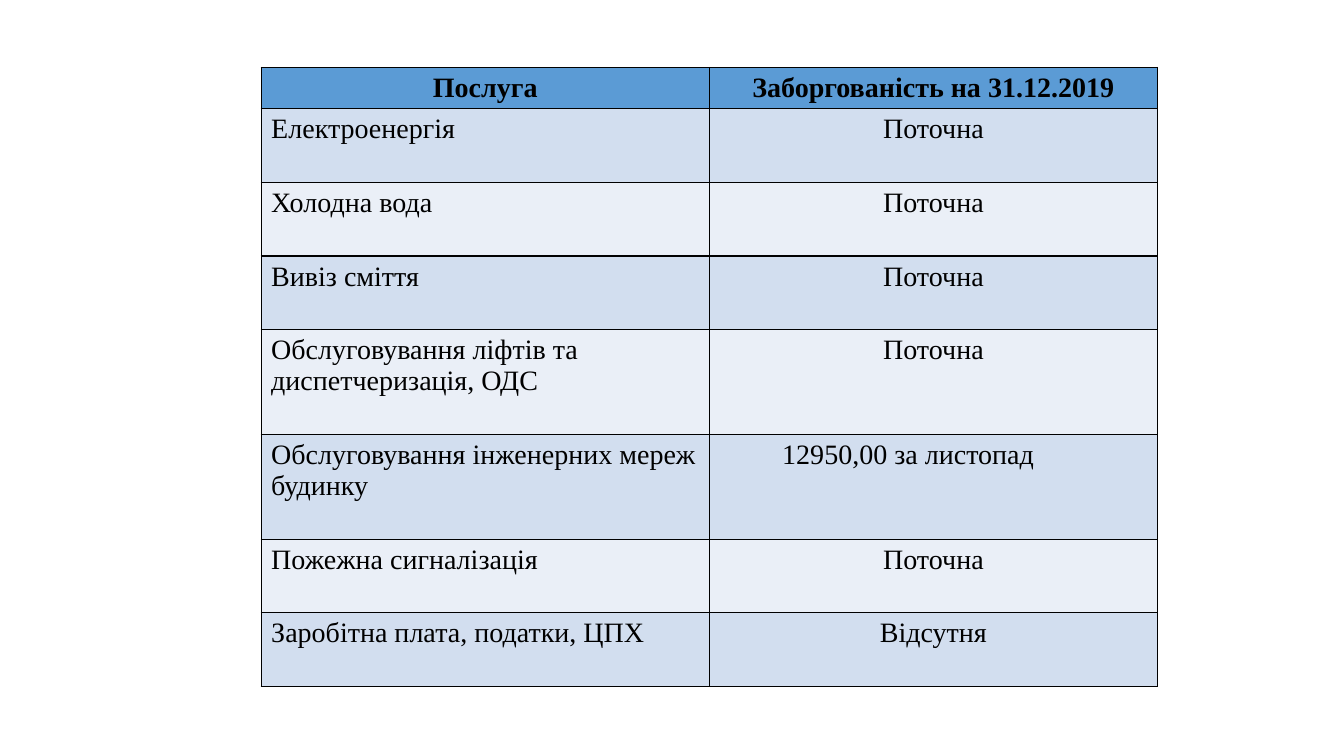
from dataclasses import dataclass

from lxml import etree
from pptx import Presentation
from pptx.dml.color import RGBColor
from pptx.enum import text
from pptx.oxml import ns
from pptx.util import Inches, Pt

HEADINGS = ("Послуга", "Заборгованість на 31.12.2019")
DEBTS = [
    ("Електроенергія", "Поточна"),
    ("Холодна вода", "Поточна"),
    ("Вивіз сміття", "Поточна"),
    ("Обслуговування ліфтів та диспетчеризація, ОДС", "Поточна"),
    ("Обслуговування інженерних мереж будинку", "12950,00 за листопад"),
    ("Пожежна сигналізація", "Поточна"),
    ("Заробітна плата, податки, ЦПХ", "Відсутня"),
]
TWO_LINE_SERVICES = {DEBTS[3][0], DEBTS[4][0]}
SHIFTED_DEBT = DEBTS[4][1]


@dataclass(frozen=True)
class Theme:
    font: str = "Times New Roman"
    size: int = 20
    ink: str = "000000"
    header: str = "5B9BD5"
    bands: tuple = ("D2DEEF", "EAEFF7")
    border: int = 1


THEME = Theme()
LEFT, TOP, COLUMN_WIDTH = 2.59, 0.67, 4.445
HEADER_HEIGHT, ROW_HEIGHT, TALL_HEIGHT = 0.41, 0.73, 1.04


def add_borders(cell):
    properties = cell._tc.get_or_add_tcPr()
    for side in ("lnL", "lnR", "lnT", "lnB"):
        line = etree.SubElement(properties, ns.qn(f"a:{side}"), w=str(Pt(THEME.border)))
        fill = etree.SubElement(line, ns.qn("a:solidFill"))
        etree.SubElement(fill, ns.qn("a:srgbClr"), val=THEME.ink)


def fill_cell(cell, words, color, centered, bold):
    add_borders(cell)
    cell.fill.solid()
    cell.fill.fore_color.rgb = RGBColor.from_string(color)
    cell.text_frame.text = words
    para = cell.text_frame.paragraphs[0]
    para.alignment = text.PP_ALIGN.CENTER if centered else text.PP_ALIGN.LEFT
    font = para.runs[0].font
    font.name, font.size, font.bold = THEME.font, Pt(THEME.size), bold
    font.color.rgb = RGBColor.from_string(THEME.ink)
    if words == SHIFTED_DEBT:
        cell.margin_right = Inches(0.6)


def row_height(index, service):
    if index == 0:
        return HEADER_HEIGHT
    return TALL_HEIGHT if service in TWO_LINE_SERVICES else ROW_HEIGHT


def main():
    deck = Presentation()
    deck.slide_width, deck.slide_height = Inches(13.33), Inches(7.5)
    page = deck.slides.add_slide(deck.slide_layouts[6])

    rows = [HEADINGS, *DEBTS]
    heights = [row_height(index, row[0]) for index, row in enumerate(rows)]
    table = page.shapes.add_table(
        len(rows), len(HEADINGS), Inches(LEFT), Inches(TOP),
        Inches(COLUMN_WIDTH * len(HEADINGS)), Inches(sum(heights)),
    ).table

    for index, (row, height) in enumerate(zip(rows, heights)):
        table.rows[index].height = Inches(height)
        is_header = index == 0
        color = THEME.header if is_header else THEME.bands[(index - 1) % 2]
        for column, words in enumerate(row):
            fill_cell(table.cell(index, column), words, color,
                      is_header or column == 1, is_header)

    deck.save("out.pptx")


if __name__ == "__main__":
    main()
